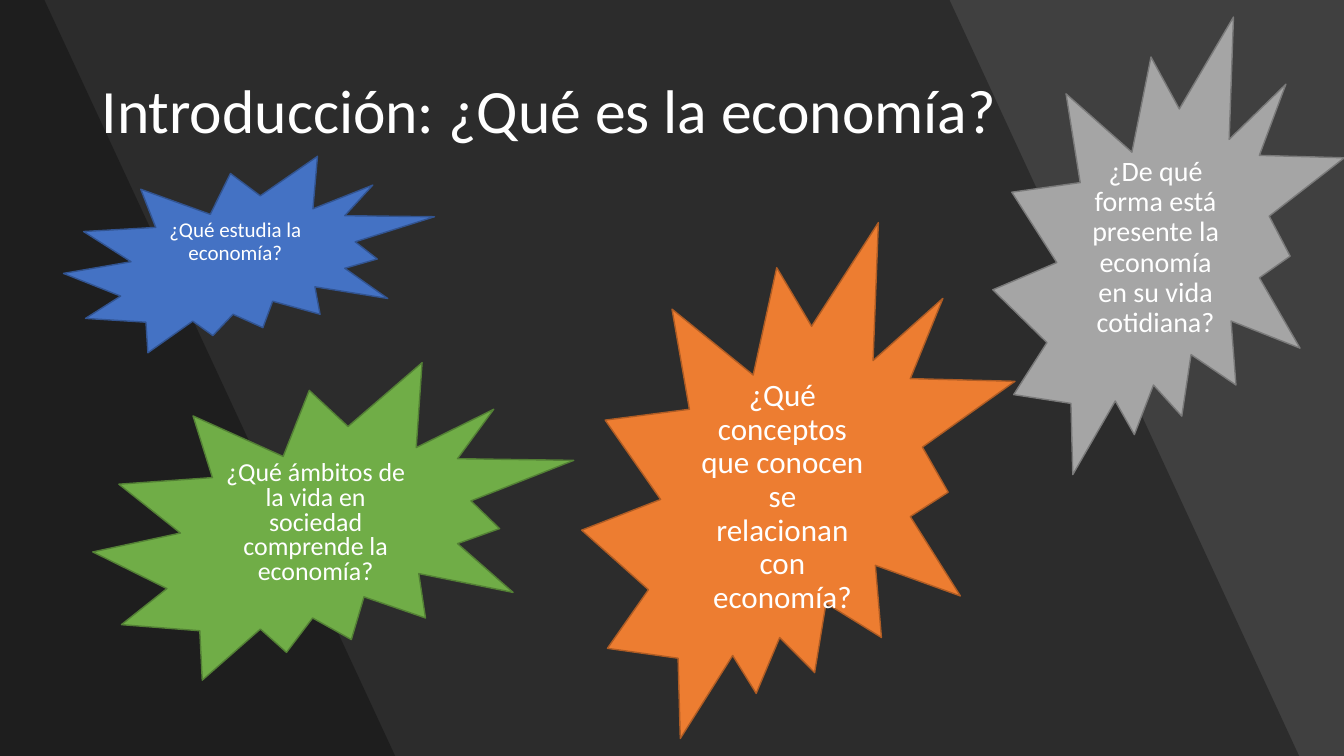
from lxml import etree
from pptx import Presentation
from pptx.dml.color import RGBColor
from pptx.enum.shapes import MSO_SHAPE
from pptx.enum.text import MSO_ANCHOR, PP_ALIGN
from pptx.oxml.ns import qn
from pptx.util import Cm, Pt

BURST = MSO_SHAPE.EXPLOSION2
TOP, MIDDLE = MSO_ANCHOR.TOP, MSO_ANCHOR.MIDDLE
LEFT, CENTER = PP_ALIGN.LEFT, PP_ALIGN.CENTER
WIDE, HIGH = 33.87, 19.05

BANDS = [(23.93, 32.74), (1.12, 9.96)]
BURSTS = [
    ((1.6, 3.94, 9.35, 4.95), "4472C4", "325491", 15, 0.9,
     "¿Qué estudia la economía?"),
    ((2.34, 9.14, 12.12, 8), "70AD47", "538035", 18.5, 0.8,
     "¿Qué ámbitos de la vida en sociedad comprende la economía?"),
    ((25.02, 0.43, 8.86, 11.53), "A5A5A5", "7A7A7A", 20, 0.9,
     "¿De qué forma está presente la economía en su vida cotidiana?"),
    ((14.66, 5.61, 10.92, 13), "ED7D31", "AF5C24", 22.2, 0.9,
     "¿Qué conceptos que conocen se relacionan con economía?"),
]


def paint(color, tint):
    """Set a fill or font colour from a hex string."""
    color.rgb = RGBColor.from_string(tint)


def write(shape, text, size, align, anchor, lead, after):
    """Put one white paragraph of Calibri into a shape."""
    frame = shape.text_frame
    frame.word_wrap = True
    frame.vertical_anchor = anchor
    frame.text = text
    para = frame.paragraphs[0]
    para.alignment = align
    para.line_spacing = lead
    para.space_after = Pt(after)
    font = para.runs[0].font
    font.name = "Calibri"
    font.size = Pt(size)
    paint(font.color, "FFFFFF")


def add_band(slide, upper, lower):
    """Shade the slide from its left edge to a slanted side."""
    pen = slide.shapes.build_freeform(0, 0)
    pen.add_line_segments([(Cm(upper), 0), (Cm(lower), Cm(HIGH)), (0, Cm(HIGH))])
    band = pen.convert_to_shape()
    band.shadow.inherit = False
    band.line.fill.background()
    band.fill.solid()
    paint(band.fill.fore_color, "000000")
    tint = band.fill._xPr.find(qn("a:solidFill"))[0]
    etree.SubElement(tint, qn("a:alpha")).set("val", "30000")


def add_burst(slide, box, fill, edge, size, lead, text):
    """Draw one question in a burst that fills the box."""
    burst = slide.shapes.add_shape(BURST, *map(Cm, box))
    burst.shadow.inherit = False
    burst.fill.solid()
    paint(burst.fill.fore_color, fill)
    paint(burst.line.color, edge)
    burst.line.width = Pt(1)
    write(burst, text, size, CENTER, TOP, lead, 6)


def add_title(slide, box, text):
    """Write the slide title inside the box."""
    title = slide.shapes.add_textbox(*map(Cm, box))
    write(title, text, 44, LEFT, MIDDLE, 0.9, 0)


def main():
    """Build and save the slide."""
    deck = Presentation()
    deck.slide_width, deck.slide_height = Cm(WIDE), Cm(HIGH)
    slide = deck.slides.add_slide(deck.slide_layouts[6])
    ground = slide.background.fill
    ground.solid()
    paint(ground.fore_color, "404040")
    for band in BANDS:
        add_band(slide, *band)
    for burst in BURSTS:
        add_burst(slide, *burst)
    add_title(slide, (2.31, 1.02, 29.24, 3.68), "Introducción: ¿Qué es la economía?")
    deck.save("out.pptx")


if __name__ == "__main__":
    main()
